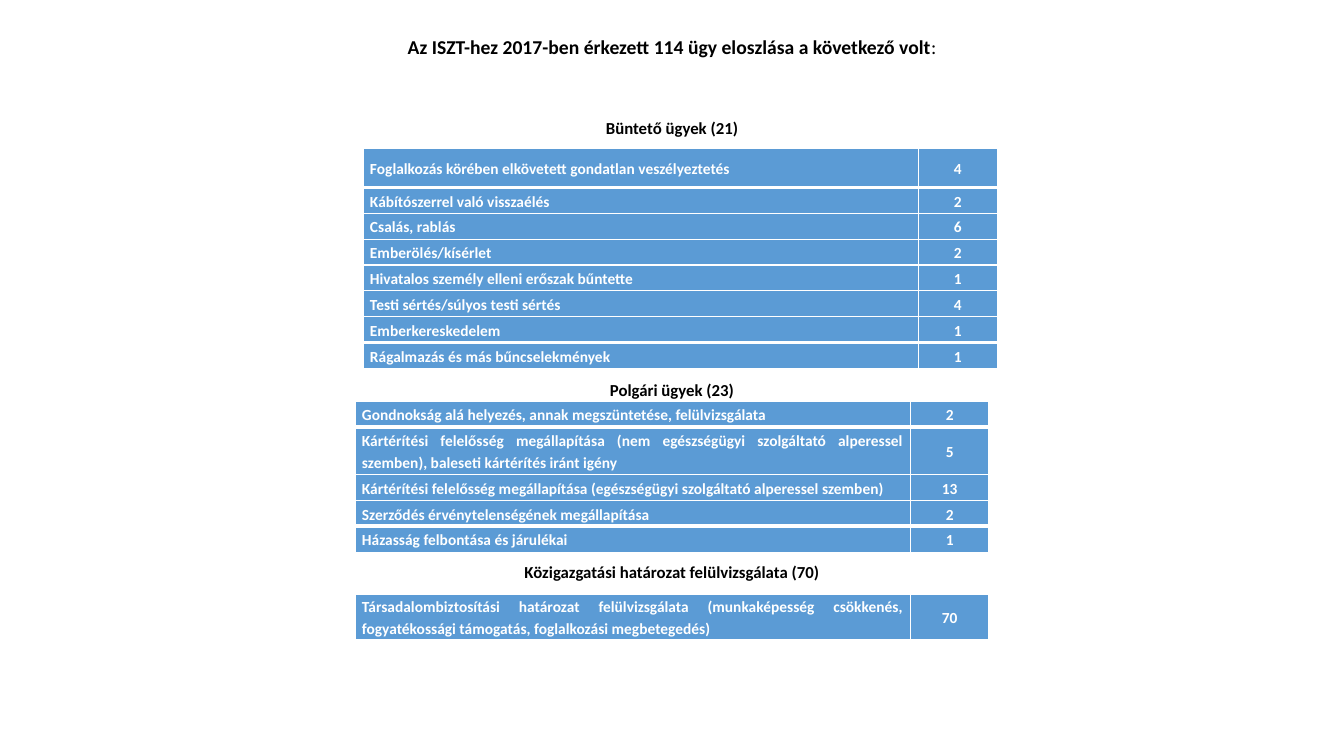
from lxml.etree import SubElement
from pptx import Presentation
from pptx.dml.color import RGBColor
from pptx.enum.text import MSO_ANCHOR as Anchor, MSO_AUTO_SIZE as AutoSize, PP_ALIGN as Align
from pptx.oxml.ns import qn
from pptx.util import Inches, Pt

FONT = "Calibri"
BLACK, WHITE, BLUE = "000000", "FFFFFF", "5B9BD5"
LABEL_WIDTH, COUNT_WIDTH = 5.51, 0.78
ROW, DOUBLE_ROW = 0.25, 0.46
THIN, THICK = 1, 3
TEXT_LEFT, TEXT_WIDTH = 2.02, 9.29

# Each section: heading, heading top, table left and top, label alignment,
# numbers of the thick horizontal rules, rows of (label, count, height)
SECTIONS = [
    ("Büntető ügyek (21)", 1.12, 3.6, 1.47, Align.LEFT, {1, 7}, [
        ("Foglalkozás körében elkövetett gondatlan veszélyeztetés", 4, 0.39),
        ("Kábítószerrel való visszaélés", 2, ROW),
        ("Csalás, rablás", 6, ROW),
        ("Emberölés/kísérlet", 2, ROW),
        ("Hivatalos személy elleni erőszak bűntette", 1, ROW),
        ("Testi sértés/súlyos testi sértés", 4, ROW),
        ("Emberkereskedelem", 1, ROW),
        ("Rágalmazás és más bűncselekmények", 1, ROW),
    ]),
    ("Polgári ügyek (23)", 3.72, 3.52, 3.98, Align.JUSTIFY, {1, 4}, [
        ("Gondnokság alá helyezés, annak megszüntetése, felülvizsgálata", 2, ROW),
        ("Kártérítési felelősség megállapítása (nem egészségügyi szolgáltató alperessel "
         "szemben), baleseti kártérítés iránt igény", 5, DOUBLE_ROW),
        ("Kártérítési felelősség megállapítása (egészségügyi szolgáltató alperessel szemben)",
         13, ROW),
        ("Szerződés érvénytelenségének megállapítása", 2, ROW),
        ("Házasság felbontása és járulékai", 1, ROW),
    ]),
    ("Közigazgatási határozat felülvizsgálata (70)", 5.52, 3.52, 5.88, Align.JUSTIFY, {0, 1}, [
        ("Társadalombiztosítási határozat felülvizsgálata (munkaképesség csökkenés, "
         "fogyatékossági támogatás, foglalkozási megbetegedés)", 70, DOUBLE_ROW),
    ]),
]


def color(value):
    return RGBColor.from_string(value)


def add_span(para, text, size, ink, bold=True):
    span = para.add_run()
    span.text = text
    span.font.name, span.font.size, span.font.bold = FONT, Pt(size), bold
    span.font.color.rgb = color(ink)


def prepare_frame(frame, anchor):
    frame.word_wrap = True
    frame.auto_size = AutoSize.NONE
    frame.vertical_anchor = anchor
    frame.margin_top = frame.margin_bottom = 0
    frame.paragraphs[0].alignment = Align.CENTER
    return frame.paragraphs[0]


def place_title(page, left, top, width, height):
    title = page.shapes.title
    title.left, title.top = Inches(left), Inches(top)
    title.width, title.height = Inches(width), Inches(height)
    para = prepare_frame(title.text_frame, Anchor.MIDDLE)
    add_span(para, "Az ISZT-hez 2017-ben érkezett 114 ügy eloszlása a következő volt", 14, BLACK)
    add_span(para, ":", 14, BLACK, bold=False)


def add_heading(page, text, left, top, width, height):
    box = page.shapes.add_textbox(Inches(left), Inches(top), Inches(width), Inches(height))
    add_span(prepare_frame(box.text_frame, Anchor.MIDDLE), text, 12, BLACK)


def draw_borders(cell, top_width, bottom_width):
    properties = cell._tc.get_or_add_tcPr()
    for side, width in (("L", THIN), ("R", THIN), ("T", top_width), ("B", bottom_width)):
        line = SubElement(properties, qn(f"a:ln{side}"), w=str(Pt(width)))
        SubElement(SubElement(line, qn("a:solidFill")), qn("a:srgbClr"), val=WHITE)


def fill_cell(cell, text, alignment, top_width, bottom_width):
    draw_borders(cell, top_width, bottom_width)
    cell.fill.solid()
    cell.fill.fore_color.rgb = color(BLUE)
    cell.vertical_anchor = Anchor.MIDDLE
    cell.margin_left = cell.margin_right = Inches(0.07)
    cell.margin_top = cell.margin_bottom = Inches(0.02)
    para = cell.text_frame.paragraphs[0]
    para.alignment, para.line_spacing = alignment, 1.15
    add_span(para, text, 11, WHITE)


def add_case_table(page, left, top, alignment, thick_rules, cases):
    height = sum(case[2] for case in cases)
    table = page.shapes.add_table(len(cases), 2, Inches(left), Inches(top),
                                  Inches(LABEL_WIDTH + COUNT_WIDTH), Inches(height)).table
    table.first_row = table.horz_banding = False
    for column, width in zip(table.columns, (LABEL_WIDTH, COUNT_WIDTH)):
        column.width = Inches(width)
    for index, (label, count, row_height) in enumerate(cases):
        table.rows[index].height = Inches(row_height)
        rules = [THICK if rule in thick_rules else THIN for rule in (index, index + 1)]
        fill_cell(table.cell(index, 0), label, alignment, *rules)
        fill_cell(table.cell(index, 1), str(count), Align.CENTER, *rules)


def main():
    deck = Presentation()
    deck.slide_width, deck.slide_height = Inches(13.33), Inches(7.5)
    page = deck.slides.add_slide(deck.slide_layouts[5])
    place_title(page, TEXT_LEFT, 0.28, TEXT_WIDTH, 0.36)
    # Case groups, each a heading above its table
    for heading, heading_top, left, top, alignment, thick_rules, cases in SECTIONS:
        add_heading(page, heading, TEXT_LEFT, heading_top, TEXT_WIDTH, 0.3)
        add_case_table(page, left, top, alignment, thick_rules, cases)
    deck.save("out.pptx")


if __name__ == "__main__":
    main()
